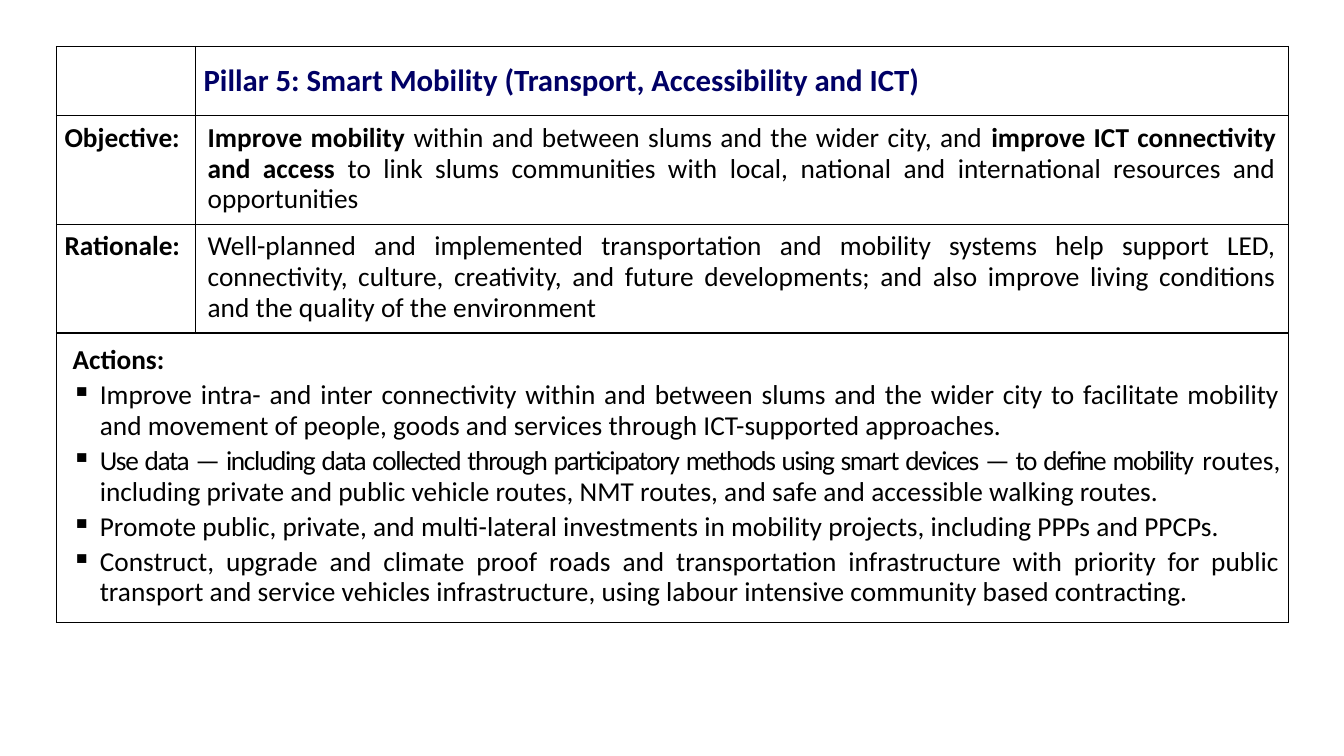
from dataclasses import dataclass

import lxml.etree
import pptx
import pptx.dml.color
import pptx.enum.text
import pptx.oxml.ns
import pptx.table
import pptx.text.text
import pptx.util

Inches = pptx.util.Inches
Pt = pptx.util.Pt
ANCHOR = pptx.enum.text.MSO_ANCHOR
ALIGN = pptx.enum.text.PP_ALIGN
qn = pptx.oxml.ns.qn


@dataclass(frozen=True)
class Span:
    text: str
    bold: bool = False
    spacing: float = 0


@dataclass(frozen=True)
class Line:
    spans: tuple[Span, ...]
    indent: float = 0
    hanging: float = 0
    bullet: str = ""
    after: float = 0


@dataclass(frozen=True)
class Entry:
    row: int
    column: int
    lines: tuple[Line, ...]
    side_margin: float = 0.08
    anchor: ANCHOR = ANCHOR.TOP


BODY_FONT = {"name": "Calibri", "size": Pt(19.5)}
HEADING_FONT = {"name": "Calibri", "size": Pt(22)}
BODY_PARAGRAPH = {"alignment": ALIGN.JUSTIFY, "line_spacing": Pt(22)}
HEADING_PARAGRAPH = {"alignment": ALIGN.LEFT, "line_spacing": 1.02}
COLUMN_WIDTHS = (1.38, 10.84)
ROW_HEIGHTS = (0.69, 1.07, 1.07, 2.87)


def label(text: str) -> tuple[Line, ...]:
    return (Line((Span(text, True),)),)


def action(*spans: Span) -> Line:
    return Line(spans, 0.35, -0.28, "▪", 3)


HEADING = Entry(
    0, 1,
    (Line((Span("Pillar 5: Smart Mobility (Transport, Accessibility and ICT)", True),), after=8),),
    anchor=ANCHOR.MIDDLE,
)
OBJECTIVE = (
    Span("Improve mobility ", True),
    Span("within and between slums and the wider city, and "),
    Span("improve ICT connectivity and access", True),
    Span(" to link slums communities with local, national and international resources and opportunities"),
)
RATIONALE = (
    Span("Well-planned and implemented transportation and mobility systems help support LED, "
         "connectivity, culture, creativity, and future developments; and also improve living "
         "conditions and the quality of the environment"),
)
ACTIONS = (
    Line((Span("Actions:", True),), indent=0.08, after=3),
    action(Span("Improve intra- and inter connectivity within and between slums and the wider city to "
                "facilitate mobility and movement of people, goods and services through "
                "ICT-supported approaches.")),
    action(Span("Use data — including data collected through participatory methods using smart "
                "devices — to define mobility", spacing=-1),
           Span(" routes, including private and public vehicle routes, NMT routes, and safe and "
                "accessible walking routes.")),
    action(Span("Promote public, private, and multi-lateral investments in mobility projects, "
                "including PPPs and PPCPs.")),
    action(Span("Construct, upgrade and climate proof roads and transportation infrastructure with "
                "priority for public transport and service vehicles infrastructure, using labour "
                "intensive community based contracting.")),
)
BODY = (
    Entry(1, 0, label("Objective:")),
    Entry(1, 1, (Line(OBJECTIVE),), 0.12),
    Entry(2, 0, label("Rationale:")),
    Entry(2, 1, (Line(RATIONALE),), 0.12),
    Entry(3, 0, ACTIONS, anchor=ANCHOR.MIDDLE),
)


def rgb(color: str) -> pptx.dml.color.RGBColor:
    return pptx.dml.color.RGBColor.from_string(color)


def apply(target: object, values: dict) -> None:
    for name, value in values.items():
        setattr(target, name, value)


def outline(cell: pptx.table._Cell) -> None:
    properties = cell._tc.get_or_add_tcPr()
    for side in ("lnL", "lnR", "lnT", "lnB"):
        edge = lxml.etree.SubElement(properties, qn(f"a:{side}"), w=str(Pt(1)))
        fill = lxml.etree.SubElement(edge, qn("a:solidFill"))
        lxml.etree.SubElement(fill, qn("a:srgbClr"), val="000000")
    cell.fill.background()


def write_line(paragraph: pptx.text.text._Paragraph, line: Line,
               paragraph_format: dict, font_format: dict, color: str) -> None:
    properties = paragraph._p.get_or_add_pPr()
    properties.set("marL", str(Inches(line.indent)))
    properties.set("indent", str(Inches(line.hanging)))
    if line.bullet:
        lxml.etree.SubElement(properties, qn("a:buChar"), char=line.bullet)
    apply(paragraph, paragraph_format | {"space_after": Pt(line.after)})
    for span in line.spans:
        run = paragraph.add_run()
        run.text = span.text
        apply(run.font, font_format | {"bold": span.bold})
        run.font.color.rgb = rgb(color)
        if span.spacing:
            run._r.get_or_add_rPr().set("spc", str(int(span.spacing * 100)))


def write_entry(table: pptx.table.Table, entry: Entry,
                paragraph_format: dict, font_format: dict, color: str) -> None:
    cell = table.cell(entry.row, entry.column)
    apply(cell, {
        "margin_left": Inches(entry.side_margin),
        "margin_right": Inches(entry.side_margin),
        "margin_top": Inches(0.08),
        "margin_bottom": Inches(0.08),
        "vertical_anchor": entry.anchor,
    })
    frame = cell.text_frame
    for index, line in enumerate(entry.lines):
        paragraph = frame.add_paragraph() if index else frame.paragraphs[0]
        write_line(paragraph, line, paragraph_format, font_format, color)


def main() -> None:
    deck = pptx.Presentation()
    apply(deck, {"slide_width": Inches(13.33), "slide_height": Inches(7.5)})
    slide = deck.slides.add_slide(deck.slide_layouts[6])
    pillar = slide.shapes.add_table(
        len(ROW_HEIGHTS), len(COLUMN_WIDTHS), Inches(0.56), Inches(0.46),
        Inches(sum(COLUMN_WIDTHS)), Inches(sum(ROW_HEIGHTS)),
    ).table
    apply(pillar, {"first_row": False, "horz_banding": False})
    for column, width in zip(pillar.columns, COLUMN_WIDTHS):
        column.width = Inches(width)
    for row, height in zip(pillar.rows, ROW_HEIGHTS):
        row.height = Inches(height)
    for cell in pillar.iter_cells():
        outline(cell)
    pillar.cell(3, 0).merge(pillar.cell(3, 1))
    write_entry(pillar, HEADING, HEADING_PARAGRAPH, HEADING_FONT, "000066")
    for entry in BODY:
        write_entry(pillar, entry, BODY_PARAGRAPH, BODY_FONT, "000000")
    deck.save("out.pptx")


if __name__ == "__main__":
    main()
